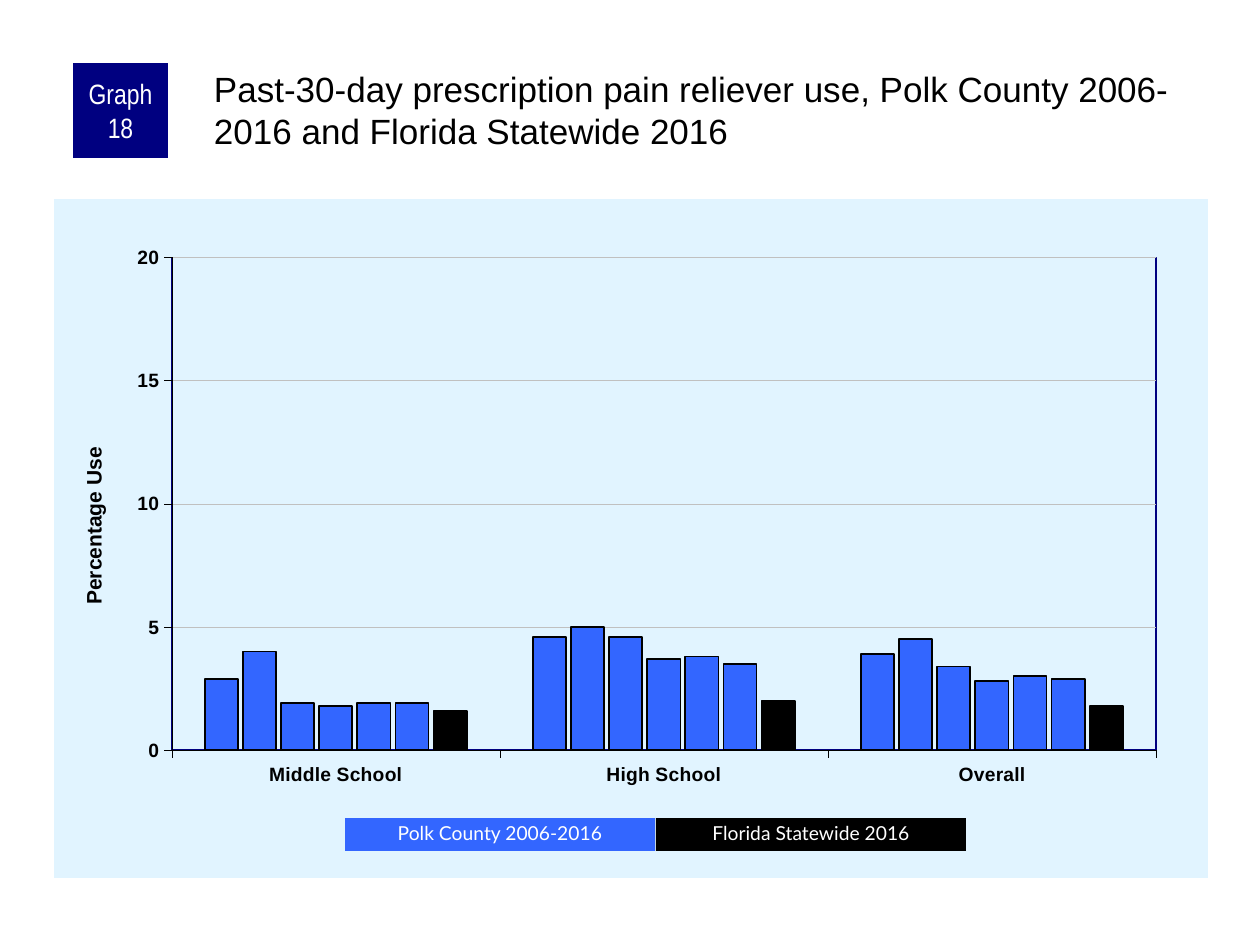
import pptx
import pptx.chart.data
import pptx.dml.color
import pptx.enum.chart
import pptx.enum.shapes
import pptx.enum.text
import pptx.oxml
import pptx.oxml.ns
import pptx.util

PX = 914400 // 126
COLORS = {
    "navy": "000080",
    "blue": "3366FF",
    "black": "000000",
    "white": "FFFFFF",
    "panel": "E1F4FF",
    "grid": "C0C0C0",
}
RGB = {name: pptx.dml.color.RGBColor.from_string(value) for name, value in COLORS.items()}
CENTER = pptx.enum.text.PP_ALIGN.CENTER
MIDDLE = pptx.enum.text.MSO_ANCHOR.MIDDLE
NAMESPACES = pptx.oxml.ns.nsdecls("c", "a")


def write_text(shape, text, font, color, paragraph_format, frame_format):
    frame = shape.text_frame
    paragraph = frame.paragraphs[0]
    run = paragraph.add_run()
    run.text = text
    run.font.color.rgb = RGB[color]
    for target, values in ((frame, frame_format), (paragraph, paragraph_format), (run.font, font)):
        for name, value in values.items():
            setattr(target, name, value)


def set_layout(parent, values, position, target=""):
    for old in parent.findall(pptx.oxml.ns.qn("c:layout")):
        parent.remove(old)
    modes = "".join(f'<c:{axis}Mode val="edge"/>' for axis in "xy")
    sizes = "".join(f'<c:{name} val="{value}"/>' for name, value in values.items())
    parent.insert(position, pptx.oxml.parse_xml(
        f"<c:layout {NAMESPACES}><c:manualLayout>{target}{modes}{sizes}</c:manualLayout></c:layout>"))


presentation = pptx.Presentation()
presentation.slide_width = pptx.util.Inches(10)
presentation.slide_height = pptx.util.Inches(7.5)
slide = presentation.slides.add_slide(presentation.slide_layouts[6])

# Chart data: one series per survey, the last one statewide
chart_data = pptx.chart.data.CategoryChartData()
chart_data.categories = ["Middle School", "High School", "Overall"]
survey_values = [
    (2.9, 4.6, 3.9),
    (4, 5, 4.5),
    (1.9, 4.6, 3.4),
    (1.8, 3.7, 2.8),
    (1.9, 3.8, 3),
    (1.9, 3.5, 2.9),
    (1.6, 2, 1.8),
]
for number, values in enumerate(survey_values, 1):
    chart_data.add_series(f"Series {number}", values)
chart = slide.shapes.add_chart(
    pptx.enum.chart.XL_CHART_TYPE.COLUMN_CLUSTERED,
    54 * PX, 199 * PX, 1154 * PX, 679 * PX, chart_data).chart
chart.has_legend = False
chart.has_title = False
chart.font.name = "Arial"
chart.font.size = pptx.util.Pt(8)

# Columns
plot = chart.plots[0]
for name, value in {"gap_width": 200, "overlap": -15, "vary_by_categories": False}.items():
    setattr(plot, name, value)
for number, series in enumerate(plot.series, 1):
    series.format.fill.solid()
    series.format.fill.fore_color.rgb = RGB["black" if number == len(survey_values) else "blue"]
    series.format.line.color.rgb = RGB["black"]
    series.format.line.width = pptx.util.Pt(1)

# Axes
axis_font = {"name": "Arial", "size": pptx.util.Pt(11), "bold": True}
value_axis = chart.value_axis
for axis in (chart.category_axis, value_axis):
    axis.major_tick_mark = pptx.enum.chart.XL_TICK_MARK.OUTSIDE
    axis.format.line.color.rgb = RGB["black"]
    axis.format.line.width = pptx.util.Pt(0.25)
    axis.tick_labels.font.color.rgb = RGB["black"]
    for name, value in axis_font.items():
        setattr(axis.tick_labels.font, name, value)
scale = {"minimum_scale": 0, "maximum_scale": 20, "major_unit": 5, "has_major_gridlines": True}
for name, value in scale.items():
    setattr(value_axis, name, value)
value_axis.major_gridlines.format.line.color.rgb = RGB["grid"]
value_axis.major_gridlines.format.line.width = pptx.util.Pt(0.25)

# Value axis title
axis_title = value_axis.axis_title
axis_title.text_frame.text = "Percentage Use"
title_font = axis_title.text_frame.paragraphs[0].runs[0].font
title_font.color.rgb = RGB["black"]
for name, value in {**axis_font, "size": pptx.util.Pt(12)}.items():
    setattr(title_font, name, value)
set_layout(axis_title._element, {"x": 0.02, "y": 0.36}, 1)

# Plot position, plot border and panel fill
chart_space = chart._chartSpace
plot_area = chart_space.chart.plotArea
set_layout(plot_area, {"x": 0.102, "y": 0.086, "w": 0.853, "h": 0.726}, 0,
           '<c:layoutTarget val="inner"/>')
plot_area.append(pptx.oxml.parse_xml(
    f'<c:spPr {NAMESPACES}><a:noFill/><a:ln w="12700"><a:solidFill>'
    f'<a:srgbClr val="{COLORS["navy"]}"/></a:solidFill></a:ln></c:spPr>'))
chart_space.chart.addnext(pptx.oxml.parse_xml(
    f'<c:spPr {NAMESPACES}><a:solidFill><a:srgbClr val="{COLORS["panel"]}"/></a:solidFill>'
    f"<a:ln><a:noFill/></a:ln></c:spPr>"))

# Graph number and legend boxes
number_font = {"name": "Arial Narrow", "size": pptx.util.Pt(16)}
number_frame = {"margin_left": 6 * PX, "margin_right": 6 * PX, "margin_top": 0, "margin_bottom": 0}
legend_font = {"name": "Lato", "size": pptx.util.Pt(11)}
boxes = [
    ("Graph 18", (73, 63, 95, 95), "navy", number_font, {}, number_frame),
    ("Polk County 2006-2016", (345, 818, 310, 33), "blue", legend_font, {"line_spacing": 0.9}, {}),
    ("Florida Statewide 2016", (656, 818, 310, 33), "black", legend_font, {"line_spacing": 0.9}, {}),
]
for text, bounds, fill, font, paragraph_format, frame_format in boxes:
    shape = slide.shapes.add_shape(
        pptx.enum.shapes.MSO_SHAPE.RECTANGLE, *(length * PX for length in bounds))
    shape.shadow.inherit = False
    shape.fill.solid()
    shape.fill.fore_color.rgb = RGB[fill]
    shape.line.fill.background()
    write_text(shape, text, font, "white", {"alignment": CENTER, **paragraph_format},
               {"word_wrap": True, "vertical_anchor": MIDDLE, **frame_format})

# Slide title
title = slide.shapes.add_textbox(210 * PX, 63 * PX, 998 * PX, 105 * PX)
write_text(
    title,
    "Past-30-day prescription pain reliever use, Polk County 2006-2016 and Florida Statewide 2016",
    {"name": "Arial", "size": pptx.util.Pt(20)}, "black", {},
    {"word_wrap": True, "margin_left": 4 * PX, "margin_top": 4 * PX,
     "margin_right": 0, "margin_bottom": 0})

presentation.save("out.pptx")
